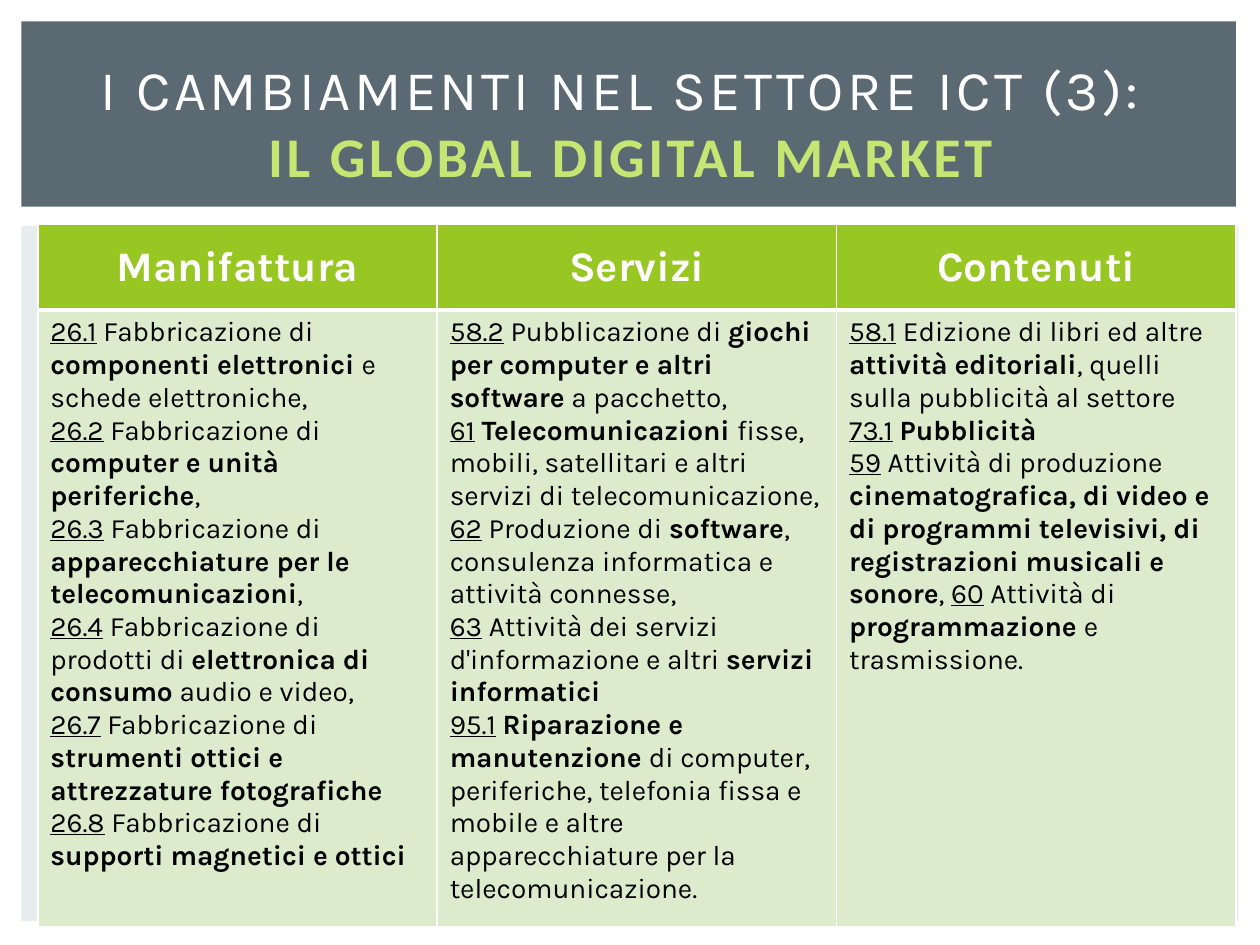
from dataclasses import dataclass

from lxml import etree
from pptx import Presentation
from pptx.dml.color import RGBColor
from pptx.enum.shapes import MSO_SHAPE
from pptx.enum.text import MSO_ANCHOR, PP_ALIGN
from pptx.oxml.ns import qn
from pptx.util import Inches, Pt

RECT = MSO_SHAPE.RECTANGLE
MIDDLE = MSO_ANCHOR.MIDDLE
TOP = MSO_ANCHOR.TOP
CENTER = PP_ALIGN.CENTER
LEFT = PP_ALIGN.LEFT

SLIDE_W, SLIDE_H = Inches(10), Inches(7.5)
GRID_COLS, GRID_ROWS = 100, 75


@dataclass(frozen=True)
class Theme:
    font: str = "Karla"
    accent_font: str = "Calibri"
    title_size: int = 32
    header_size: int = 24
    body_size: int = 16
    title_spacing: int = 2
    white: str = "FFFFFF"
    black: str = "000000"
    panel: str = "E7ECED"
    banner: str = "5B6973"
    accent: str = "C5E672"
    header: str = "98C723"
    body: str = "DDEBCD"


THEME = Theme()

# *bold* and _underlined_
SECTORS = {
    "Manifattura": [
        "_26.1_ Fabbricazione di *componenti elettronici *e schede elettroniche,",
        "_26.2_ Fabbricazione di *computer e unità periferiche*,",
        "_26.3_ Fabbricazione di *apparecchiature per le telecomunicazioni*,",
        "_26.4_ Fabbricazione di prodotti di *elettronica di consumo* audio e video,",
        "_26.7_ Fabbricazione di *strumenti ottici e attrezzature fotografiche*",
        "_26.8_ Fabbricazione di *supporti magnetici e ottici*",
    ],
    "Servizi": [
        "_58.2_ Pubblicazione di *giochi per computer e altri software* a pacchetto,",
        "_61_ *Telecomunicazioni *fisse, mobili, satellitari e altri servizi di "
        "telecomunicazione,",
        "_62_ Produzione di *software*, consulenza informatica e attività connesse,",
        "_63_ Attività dei servizi d'informazione e altri *servizi informatici*",
        "_95.1_ *Riparazione e manutenzione *di computer, periferiche, telefonia "
        "fissa e mobile e altre apparecchiature per la telecomunicazione.",
    ],
    "Contenuti": [
        "_58.1_ Edizione di libri ed altre *attività editoriali*, quelli sulla "
        "pubblicità al settore",
        "_73.1_ *Pubblicità*",
        "_59_ Attività di produzione *cinematografica, di video e di programmi "
        "televisivi, di registrazioni musicali e sonore*, _60_ Attività di "
        "*programmazione *e trasmissione.",
    ],
}


def rgb(color):
    return RGBColor.from_string(color)


def col(n):
    return round(SLIDE_W * n / GRID_COLS)


def row(n):
    return round(SLIDE_H * n / GRID_ROWS)


def box(x, y, w, h):
    return col(x), row(y), col(w), row(h)


def add_panel(s, place, color):
    sp = s.shapes.add_shape(RECT, *place)
    sp.shadow.inherit = False
    sp.fill.solid()
    sp.fill.fore_color.rgb = rgb(color)
    sp.line.fill.background()


def add_run(p, text, size, color, font=THEME.font, bold=False, underline=False):
    r = p.add_run()
    r.text = text
    r.font.name = font
    r.font.size = Pt(size)
    r.font.color.rgb = rgb(color)
    r.font.bold = bold
    r.font.underline = underline
    return r


def add_marked_text(p, text):
    for i, part in enumerate(text.split("*")):
        for j, piece in enumerate(part.split("_")):
            if piece:
                add_run(p, piece, THEME.body_size, THEME.black,
                        bold=i % 2 == 1, underline=j % 2 == 1)


def add_title(s, place, first, second):
    tf = s.shapes.add_textbox(*place).text_frame
    tf.word_wrap = True
    tf.vertical_anchor = MIDDLE
    p = tf.paragraphs[0]
    p.alignment = CENTER
    runs = [add_run(p, first, THEME.title_size, THEME.white)]
    p.add_line_break()
    runs.append(add_run(p, second, THEME.title_size, THEME.accent,
                        THEME.accent_font, bold=True))
    for r in runs:
        r.font._element.set("spc", str(THEME.title_spacing * 100))


def style_cell(cell, color, anchor, bottom=1):
    cell.vertical_anchor = anchor
    tc_pr = cell._tc.get_or_add_tcPr()
    for side, width in (("L", 1), ("R", 1), ("T", 1), ("B", bottom)):
        ln = etree.SubElement(tc_pr, qn(f"a:ln{side}"), w=str(Pt(width)))
        fill = etree.SubElement(ln, qn("a:solidFill"))
        etree.SubElement(fill, qn("a:srgbClr"), val=THEME.white)
    cell.fill.solid()
    cell.fill.fore_color.rgb = rgb(color)


def add_sector_table(s, place, header_height):
    table = s.shapes.add_table(2, len(SECTORS), *place).table
    table.rows[0].height = header_height
    table.rows[1].height = place[3] - header_height
    for i, (name, entries) in enumerate(SECTORS.items()):
        head, body = table.cell(0, i), table.cell(1, i)
        style_cell(head, THEME.header, MIDDLE, bottom=3)
        p = head.text_frame.paragraphs[0]
        p.alignment = CENTER
        add_run(p, name, THEME.header_size, THEME.white, bold=True)

        style_cell(body, THEME.body, TOP)
        tf = body.text_frame
        for n, entry in enumerate(entries):
            p = tf.add_paragraph() if n else tf.paragraphs[0]
            p.alignment = LEFT
            add_marked_text(p, entry)


def main():
    prs = Presentation()
    prs.slide_width, prs.slide_height = SLIDE_W, SLIDE_H
    s = prs.slides.add_slide(prs.slide_layouts[6])
    add_panel(s, box(1.7, 17.9, 96.6, 55.2), THEME.panel)
    add_panel(s, box(1.7, 1.7, 96.4, 14.7), THEME.banner)
    add_title(s, box(4.2, 3.9, 91.7, 11.5),
              "I CAMBIAMENTI NEL SETTORE ICT (3): ", "IL GLOBAL DIGITAL MARKET")
    add_sector_table(s, box(3, 17.8, 95.1, 53.2), row(6.8))
    prs.save("out.pptx")


if __name__ == "__main__":
    main()
